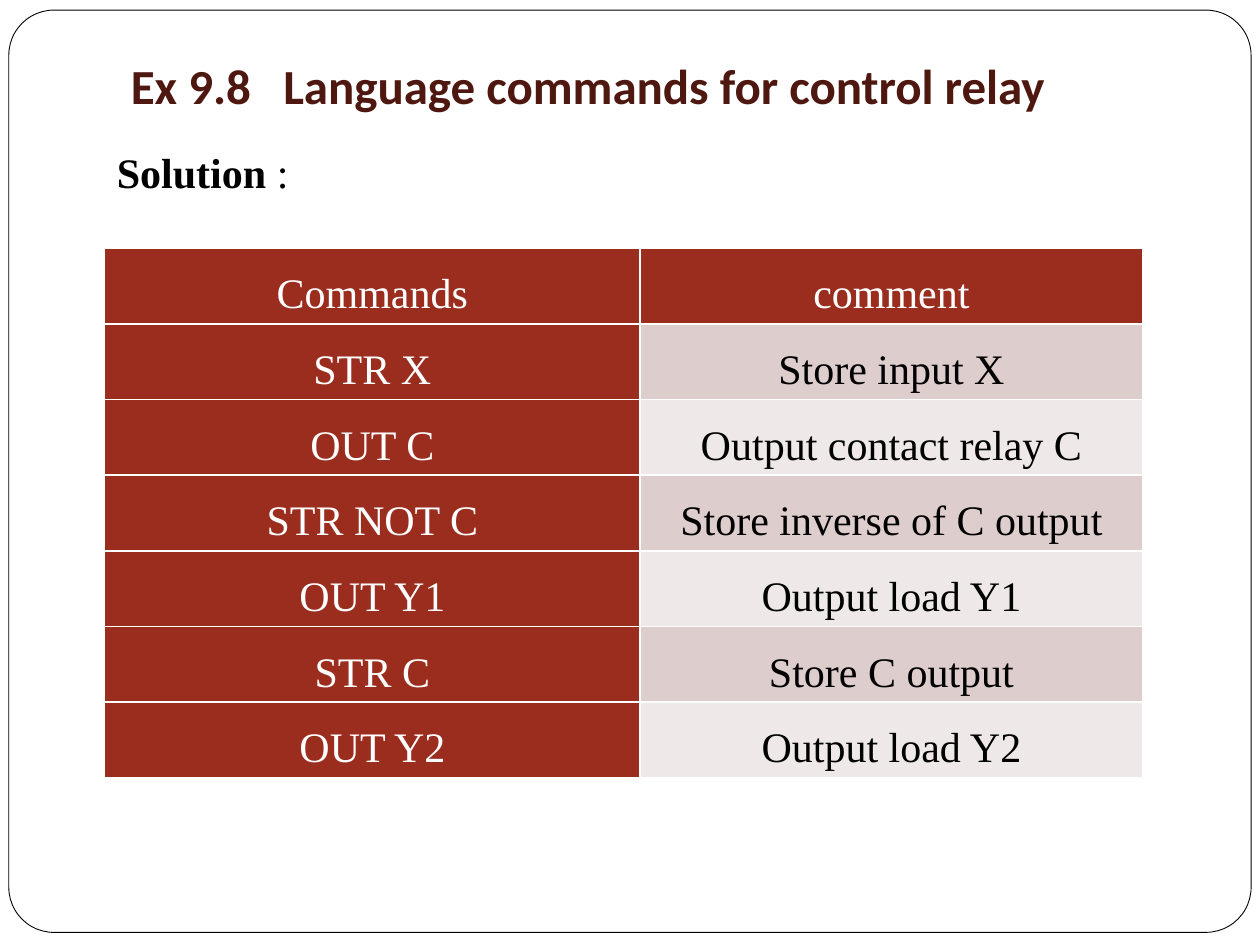
from lxml.etree import SubElement
from pptx import Presentation
from pptx.dml.color import RGBColor
from pptx.enum.shapes import MSO_SHAPE
from pptx.enum.text import MSO_ANCHOR, PP_ALIGN
from pptx.oxml.ns import qn
from pptx.util import Inches, Pt

COLORS = {
    "white": "FFFFFF",
    "black": "000000",
    "title": "4E1710",
    "brick": "9B2D1F",
    "band_dark": "DECDCD",
    "band_light": "EFE8E8",
}
SERIF = "Times New Roman"
COMMANDS = [
    ("Commands", "comment"),
    ("STR X", "Store input X"),
    ("OUT C", "Output contact relay C"),
    ("STR NOT C", "Store inverse of C output"),
    ("OUT Y1", "Output load Y1"),
    ("STR C", "Store C output"),
    ("OUT Y2", "Output load Y2"),
]


def rgb(name):
    return RGBColor.from_string(COLORS[name])


def add_run(paragraph, text, color, size=24, font=SERIF, bold=False):
    run = paragraph.add_run()
    run.text = text
    run.font.name = font
    run.font.size = Pt(size)
    run.font.bold = bold
    run.font.color.rgb = rgb(color)


def add_text_frame(slide, left, top, width, height):
    frame = slide.shapes.add_textbox(left, top, width, height).text_frame
    frame.word_wrap = True
    return frame


def add_frame(slide, left, top, width, height):
    """Rounded outline around the whole slide."""
    outline = slide.shapes.add_shape(
        MSO_SHAPE.ROUNDED_RECTANGLE, left, top, width, height)
    outline.adjustments[0] = 0.049
    outline.shadow.inherit = False
    outline.fill.solid()
    outline.fill.fore_color.rgb = rgb("white")
    outline.line.color.rgb = rgb("black")
    outline.line.width = Pt(0.5)


def add_title(slide, left, top, width, height):
    title = add_text_frame(slide, left, top, width, height)
    title.vertical_anchor = MSO_ANCHOR.BOTTOM
    title.margin_bottom = Inches(0.1)
    paragraph = title.paragraphs[0]
    tab_stops = SubElement(paragraph._p.get_or_add_pPr(), qn("a:tabLst"))
    SubElement(tab_stops, qn("a:tab"), pos=str(Inches(1.21)), algn="l")
    add_run(paragraph, "Ex 9.8\tLanguage commands for control relay",
            "title", 28, "Calibri", True)


def add_solution_label(slide, left, top, width, height):
    label = add_text_frame(slide, left, top, width, height)
    label.margin_top = Inches(0.08)
    paragraph = label.paragraphs[0]
    add_run(paragraph, "Solution", "black", bold=True)
    add_run(paragraph, " :", "black")


def set_borders(cell, bottom_width):
    properties = cell._tc.get_or_add_tcPr()
    for side, width in (("L", 1), ("R", 1), ("T", 1), ("B", bottom_width)):
        border = SubElement(properties, qn(f"a:ln{side}"), w=str(Pt(width)))
        fill = SubElement(border, qn("a:solidFill"))
        SubElement(fill, qn("a:srgbClr"), val=COLORS["white"])


def fill_cell(cell, text, fill, color):
    cell.margin_left = cell.margin_right = Inches(0.07)
    cell.margin_top = cell.margin_bottom = 0
    cell.fill.solid()
    cell.fill.fore_color.rgb = rgb(fill)
    paragraph = cell.text_frame.paragraphs[0]
    paragraph.alignment = PP_ALIGN.CENTER
    paragraph.line_spacing = 1.5
    add_run(paragraph, text, color)


def add_command_table(slide, left, top, width, height):
    table = slide.shapes.add_table(
        len(COMMANDS), 2, left, top, width, height).table
    command_width = Inches(4.25)
    table.columns[0].width = command_width
    table.columns[1].width = width - command_width
    for row, texts in enumerate(COMMANDS):
        for column, text in enumerate(texts):
            cell = table.cell(row, column)
            set_borders(cell, 1)
            if row == 0 or column == 0:
                fill_cell(cell, text, "brick", "white")
            else:
                band = "band_dark" if row % 2 else "band_light"
                fill_cell(cell, text, band, "black")


def main():
    presentation = Presentation()
    presentation.slide_width = Inches(10)
    presentation.slide_height = Inches(7.5)
    slide = presentation.slides.add_slide(presentation.slide_layouts[6])
    add_frame(slide, Inches(0.07), Inches(0.08), Inches(9.86), Inches(7.32))
    add_solution_label(slide, Inches(0.83), Inches(1.08), Inches(7.17), Inches(0.81))
    add_command_table(slide, Inches(0.83), Inches(1.97), Inches(8.24), Inches(4.2))
    add_title(slide, Inches(0.94), Inches(0.16), Inches(8.5), Inches(0.85))
    presentation.save("out.pptx")


if __name__ == "__main__":
    main()
